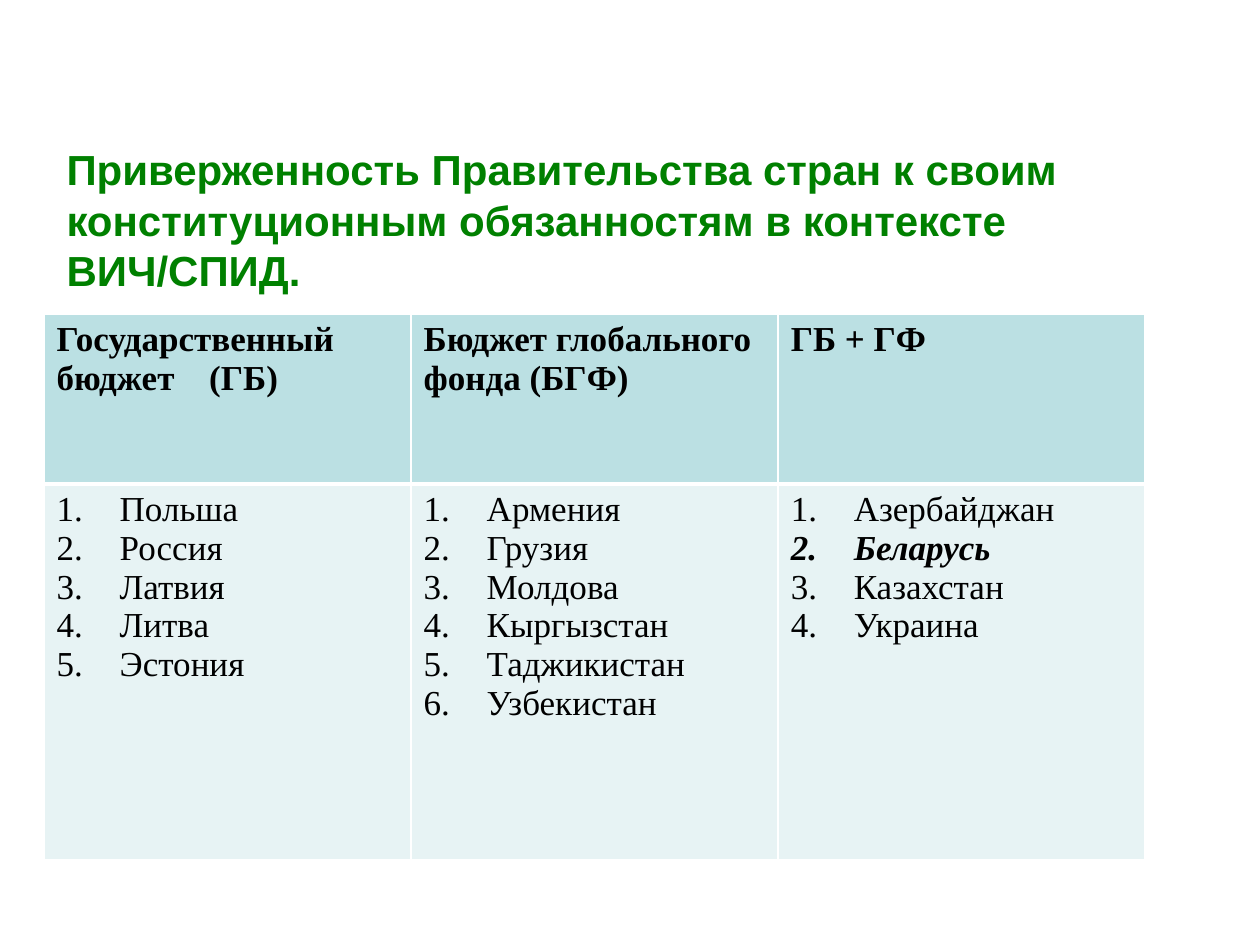
from lxml.etree import SubElement
from pptx import Presentation
from pptx.dml.color import RGBColor
from pptx.enum.text import MSO_ANCHOR
from pptx.oxml.ns import qn
from pptx.util import Inches, Pt

GREEN = RGBColor(0x00, 0x80, 0x00)
BLACK = RGBColor(0x00, 0x00, 0x00)
WHITE = RGBColor(0xFF, 0xFF, 0xFF)
HEADER_FILL = RGBColor(0xBB, 0xE0, 0xE3)
BODY_FILL = RGBColor(0xE7, 0xF3, 0xF4)

TITLE = "Приверженность Правительства стран к своим конституционным обязанностям в контексте ВИЧ/СПИД."
FUNDING = {
    "Государственный бюджет\t(ГБ)": ["Польша", "Россия", "Латвия", "Литва", "Эстония"],
    "Бюджет глобального фонда (БГФ)": [
        "Армения", "Грузия", "Молдова", "Кыргызстан", "Таджикистан", "Узбекистан"],
    "ГБ + ГФ": ["Азербайджан", "Беларусь", "Казахстан", "Украина"],
}
HIGHLIGHTED = "Беларусь"


def write_text(paragraph, text, *, size=20, font="Times New Roman", color=BLACK,
               bold=False, italic=False):
    run = paragraph.add_run()
    run.text = text
    run.font.size = Pt(size)
    run.font.name = font
    run.font.color.rgb = color
    run.font.bold = bold
    run.font.italic = italic


def set_number(paragraph):
    properties = paragraph._p.get_or_add_pPr()
    properties.set("marL", str(Inches(0.5)))
    properties.set("indent", str(Inches(-0.5)))
    SubElement(properties, qn("a:buFont"), typeface="+mj-lt")
    SubElement(properties, qn("a:buAutoNum"), type="arabicPeriod")


def set_tab(paragraph, position):
    tabs = SubElement(paragraph._p.get_or_add_pPr(), qn("a:tabLst"))
    SubElement(tabs, qn("a:tab"), pos=str(position), algn="l")


def style_cell(cell, fill, top, bottom):
    # Borders come before the fill in the cell properties
    properties = cell._tc.get_or_add_tcPr()
    for side, width in (("L", 1), ("R", 1), ("T", top), ("B", bottom)):
        border = SubElement(properties, qn(f"a:ln{side}"), w=str(Pt(width)))
        border_fill = SubElement(border, qn("a:solidFill"))
        SubElement(border_fill, qn("a:srgbClr"), val=str(WHITE))
    cell.fill.solid()
    cell.fill.fore_color.rgb = fill


def add_title(slide):
    frame = slide.shapes.add_textbox(
        Inches(0.43), Inches(0.6), Inches(9.07), Inches(2.05)).text_frame
    frame.word_wrap = True
    frame.vertical_anchor = MSO_ANCHOR.BOTTOM
    frame.margin_bottom = Inches(0.31)
    write_text(frame.paragraphs[0], TITLE, size=24, font="Arial", color=GREEN, bold=True)


def add_funding_table(slide):
    table = slide.shapes.add_table(
        2, len(FUNDING), Inches(0.35), Inches(2.49), Inches(8.74), Inches(4.33)).table
    table.first_row = table.horz_banding = False
    table.rows[0].height = Inches(1.35)
    table.rows[1].height = Inches(2.98)

    for column, (source, countries) in enumerate(FUNDING.items()):
        # Funding source
        header = table.cell(0, column)
        style_cell(header, HEADER_FILL, top=1, bottom=3)
        heading = header.text_frame.paragraphs[0]
        if "\t" in source:
            set_tab(heading, Inches(1.21))
        write_text(heading, source, bold=True)

        # Numbered countries
        body = table.cell(1, column)
        style_cell(body, BODY_FILL, top=3, bottom=1)
        frame = body.text_frame
        for index, country in enumerate(countries):
            paragraph = frame.add_paragraph() if index else frame.paragraphs[0]
            set_number(paragraph)
            emphasis = country == HIGHLIGHTED
            write_text(paragraph, country, bold=emphasis, italic=emphasis)


def main():
    presentation = Presentation()
    presentation.slide_width = Inches(10)
    presentation.slide_height = Inches(7.5)
    slide = presentation.slides.add_slide(presentation.slide_layouts[6])
    add_title(slide)
    add_funding_table(slide)
    presentation.save("out.pptx")


if __name__ == "__main__":
    main()
